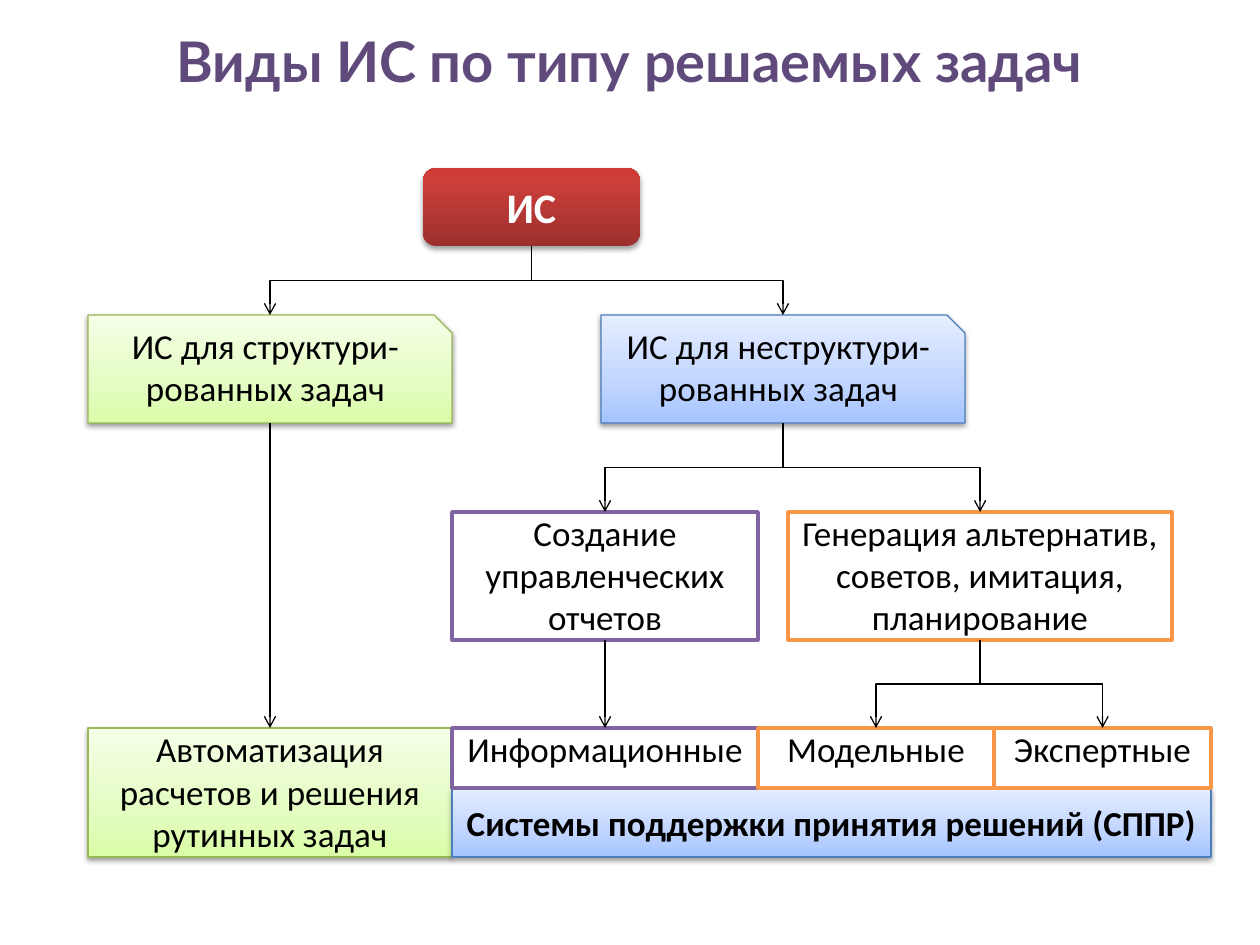
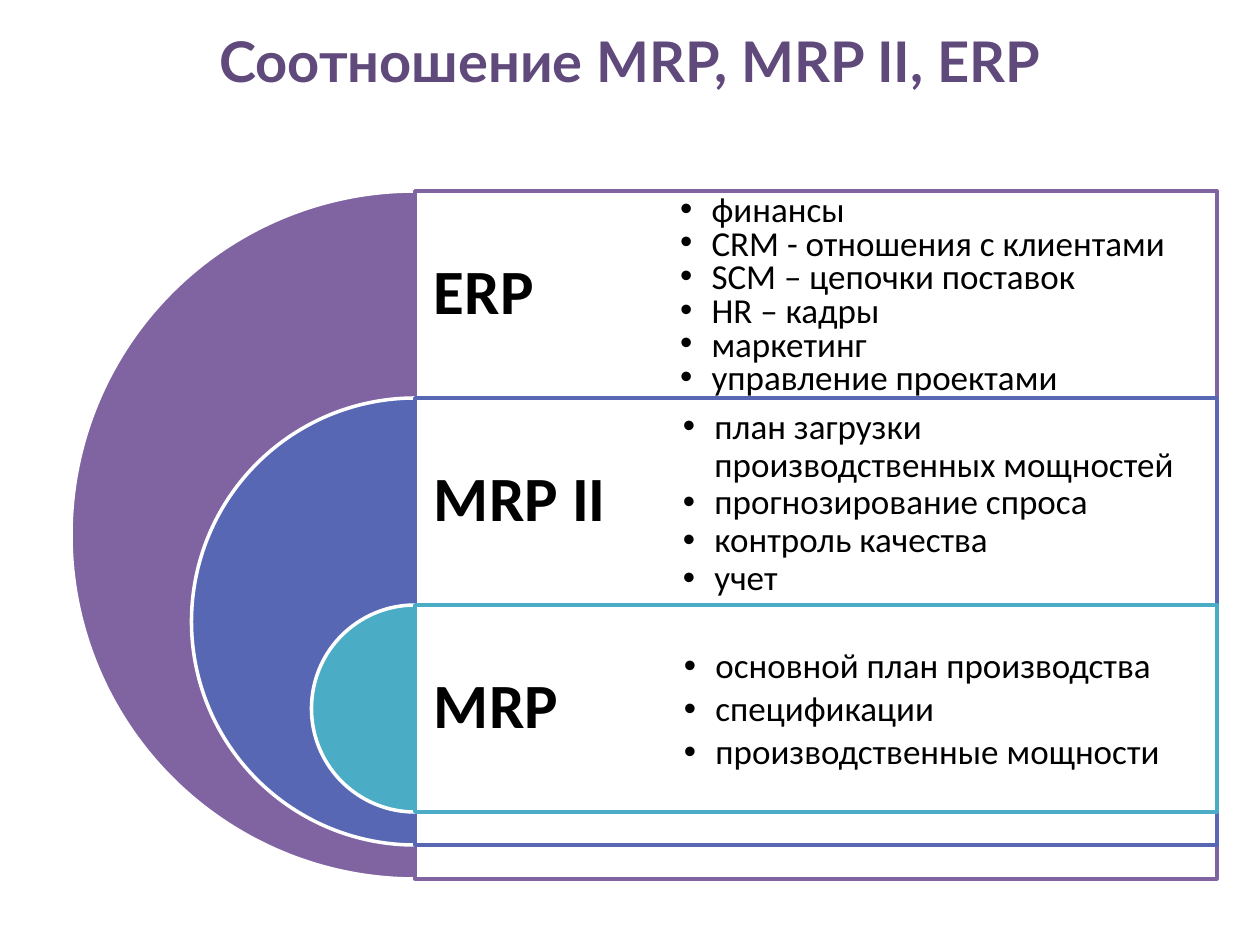
from lxml import etree
from pptx import Presentation
from pptx.dml.color import RGBColor
from pptx.enum import shapes, text
from pptx.oxml.ns import qn
from pptx.util import Inches, Pt

PX_PER_INCH = 126
TITLE_FONT, BODY_FONT = "Lato", "Calibri"
BLACK = RGBColor(0x00, 0x00, 0x00)
WHITE = RGBColor(0xFF, 0xFF, 0xFF)
TITLE_PURPLE = RGBColor(0x60, 0x4A, 0x7B)
PURPLE = RGBColor(0x80, 0x64, 0xA2)
INDIGO = RGBColor(0x57, 0x67, 0xB4)
TEAL = RGBColor(0x4B, 0xAC, 0xC6)
ORANGE = RGBColor(0xF7, 0x96, 0x46)
GREEN_EDGE = RGBColor(0x98, 0xB9, 0x55)
BLUE_EDGE = RGBColor(0x4B, 0x7E, 0xBC)

# Gradient stops from bottom to top: percent, colour
RED_FADE = [(0, RGBColor(0x9C, 0x2F, 0x2D)), (80, RGBColor(0xCB, 0x3E, 0x3A)),
            (100, RGBColor(0xCE, 0x3B, 0x37))]
GREEN_FADE = [(0, RGBColor(0xDA, 0xFD, 0xA7)), (35, RGBColor(0xE4, 0xFC, 0xC2)),
              (100, RGBColor(0xF5, 0xFF, 0xE7))]
BLUE_FADE = [(0, RGBColor(0xA4, 0xC4, 0xFF)), (35, RGBColor(0xBF, 0xD4, 0xFF)),
             (100, RGBColor(0xE6, 0xEE, 0xFF))]

SHAPE = shapes.MSO_SHAPE
TOP, MIDDLE = text.MSO_ANCHOR.TOP, text.MSO_ANCHOR.MIDDLE
LEFT, CENTER = text.PP_ALIGN.LEFT, text.PP_ALIGN.CENTER


def px(*lengths):
    return [Inches(length / PX_PER_INCH) for length in lengths]


def child(parent, tag, **attributes):
    return etree.SubElement(parent, qn(tag), attributes)


def apply(target, values):
    for name, value in values.items():
        setattr(target, name, value)


def set_frame(frame, anchor, inset_x, inset_y):
    side, top = px(inset_x, inset_y)
    apply(frame, {"word_wrap": True, "vertical_anchor": anchor,
                  "margin_left": side, "margin_right": side,
                  "margin_top": top, "margin_bottom": top})


def write(para, words, size, color=BLACK, bold=False, align=LEFT, font=BODY_FONT):
    para.alignment = align
    span = para.add_run()
    span.text = words
    apply(span.font, {"name": font, "size": Pt(size), "bold": bold})
    span.font.color.rgb = color


def add_page(deck, heading):
    page = deck.slides.add_slide(deck.slide_layouts[5])
    title = page.shapes.title
    apply(title, dict(zip(("left", "top", "width", "height"), px(63, 20, 1134, 147))))
    title.text_frame.vertical_anchor = TOP
    write(title.text_frame.paragraphs[0], heading, 32, TITLE_PURPLE, True, CENTER, TITLE_FONT)
    return page


def add_figure(page, kind, box, fill, edge=None, edge_width=2):
    figure = page.shapes.add_shape(kind, *px(*box))
    figure.shadow.inherit = False
    if isinstance(fill, list):
        fade(figure, fill)
    else:
        figure.fill.solid()
        figure.fill.fore_color.rgb = fill
    if edge is None:
        figure.line.fill.background()
    else:
        figure.line.color.rgb = edge
        figure.line.width = Pt(edge_width)
    return figure


def fade(figure, stops):
    """Vertical gradient with a soft shadow beneath."""
    figure.fill.gradient()
    figure.fill.gradient_angle = 90
    properties = figure._element.spPr
    stop_list = properties.find(".//" + qn("a:gsLst"))
    for stop in list(stop_list):
        stop_list.remove(stop)
    for percent, color in stops:
        stop = child(stop_list, "a:gs", pos=str(percent * 1000))
        child(stop, "a:srgbClr", val=str(color))
    shadow = child(properties.find(qn("a:effectLst")), "a:outerShdw", blurRad=str(Pt(3.1)),
                   dist=str(Pt(1.6)), dir="5400000", rotWithShape="0")
    child(child(shadow, "a:srgbClr", val="000000"), "a:alpha", val="38000")


# Slide 1: tree of system types

def add_node(page, box, words, fill, edge=None, edge_width=2, kind=SHAPE.RECTANGLE,
             anchor=TOP, **style):
    node = add_figure(page, kind, box, fill, edge, edge_width)
    set_frame(node.text_frame, anchor, 5, 0)
    write(node.text_frame.paragraphs[0], words, **{"size": 20, "align": CENTER, **style})
    return node


def add_link(page, parent, target):
    """Arrow from the bottom centre of one node to the top centre of another."""
    x1, y1 = parent.left + parent.width // 2, parent.top + parent.height
    x2, y2 = target.left + target.width // 2, target.top
    if abs(x2 - x1) < px(2)[0]:
        link = page.shapes.add_connector(shapes.MSO_CONNECTOR.STRAIGHT, x2, y1, x2, y2)
    else:
        # A vertical elbow is a horizontal one turned about its centre
        mid_x, mid_y = (x1 + x2) // 2, (y1 + y2) // 2
        half_run, half_rise = (y2 - y1) // 2, abs(x2 - x1) // 2
        to_right = x2 > x1
        if to_right:
            half_run = -half_run
        link = page.shapes.add_connector(
            shapes.MSO_CONNECTOR.ELBOW, mid_x - half_run, mid_y - half_rise,
            mid_x + half_run, mid_y + half_rise)
        frame = link._element.spPr.find(qn("a:xfrm"))
        frame.set("rot", "16200000" if to_right else "5400000")
    link.line.color.rgb = BLACK
    link.line.width = Pt(0.75)
    child(link.line._get_or_add_ln(), "a:tailEnd", type="arrow")
    child(link._element.spPr, "a:effectLst")


def build_tree(page):
    green = {"fill": GREEN_FADE, "edge": GREEN_EDGE, "edge_width": 0.75}
    blue = {"fill": BLUE_FADE, "edge": BLUE_EDGE, "edge_width": 0.75}
    purple = {"fill": WHITE, "edge": PURPLE}
    orange = {"fill": WHITE, "edge": ORANGE}
    snipped = SHAPE.SNIP_1_RECTANGLE

    # Nodes, level by level
    root = add_node(page, (423, 168, 217, 78), "ИС", RED_FADE, kind=SHAPE.ROUNDED_RECTANGLE,
                    anchor=MIDDLE, size=24, color=WHITE, bold=True)
    structured = add_node(page, (88, 315, 364, 108), "ИС для структури-рованных задач",
                          kind=snipped, **green)
    unstructured = add_node(page, (601, 315, 364, 108), "ИС для неструктури-рованных задач",
                            kind=snipped, **blue)
    automation = add_node(page, (88, 728, 364, 129),
                          "Автоматизация расчетов и решения рутинных задач", **green)
    reports = add_node(page, (452, 512, 306, 128), "Создание управленческих отчетов", **purple)
    options = add_node(page, (788, 512, 384, 128),
                       "Генерация альтернатив, советов, имитация, планирование", **orange)
    add_node(page, (452, 788, 759, 69), "Системы поддержки принятия решений (СППР)",
             anchor=MIDDLE, bold=True, **blue)
    informational = add_node(page, (452, 728, 306, 60), "Информационные", **purple)
    model = add_node(page, (758, 728, 236, 60), "Модельные", **orange)
    expert = add_node(page, (994, 728, 217, 60), "Экспертные", **orange)

    # Arrows
    for parent, targets in ((root, (structured, unstructured)), (structured, (automation,)),
                            (unstructured, (reports, options)), (reports, (informational,)),
                            (options, (model, expert))):
        for target in targets:
            add_link(page, parent, target)


# Slide 2: nested half circles with bands

def add_text_box(page, box, inset):
    frame = page.shapes.add_textbox(*px(*box)).text_frame
    set_frame(frame, MIDDLE, inset, inset)
    return frame


def add_list(page, box, items, spacing, gap):
    frame = add_text_box(page, box, 34)
    indent = Inches(0.25)
    for index, item in enumerate(items):
        para = frame.add_paragraph() if index else frame.paragraphs[0]
        apply(para, {"line_spacing": spacing, "space_after": Pt(gap)})
        properties = para._p.get_or_add_pPr()
        properties.set("marL", str(indent))
        properties.set("indent", str(-indent))
        child(properties, "a:buFont", typeface="Arial")
        child(properties, "a:buChar", char="•")
        write(para, item, 20)


def build_nesting(page):
    axis, right, top, step = 415, 1217, 191, 207
    rings = [
        ("ERP", 688, PURPLE, 646, 0.8, 0,
         ["финансы", "CRM - отношения с клиентами", "SCM – цепочки поставок",
          "HR – кадры", "маркетинг", "управление проектами"]),
        ("MRP II", 447, INDIGO, 649, 0.9, 0,
         ["план загрузки производственных мощностей", "прогнозирование спроса",
          "контроль качества", "учет"]),
        ("MRP", 207, TEAL, 650, 0.9, 3,
         ["основной план производства", "спецификации", "производственные мощности"]),
    ]
    # Half circle, band and name of each ring
    for index, (name, size, color, *_) in enumerate(rings):
        y = top + index * step
        half = add_figure(page, SHAPE.PIE, (axis - size / 2, y, size, size), color, WHITE)
        half.adjustments[0], half.adjustments[1] = 54, 162
        band = add_figure(page, SHAPE.RECTANGLE, (axis, y, right - axis, size), WHITE, color)
        tint = band._element.spPr.find(qn("a:solidFill"))[0]
        child(tint, "a:alpha", val="90000")
        label = add_text_box(page, (axis, y, 402, step), 19).paragraphs[0]
        label.line_spacing = 0.9
        write(label, name, 36, bold=True)
    # Lists
    for index, (*_, left, spacing, gap, items) in enumerate(rings):
        box = (left, top + index * step + 2, right - left, step)
        add_list(page, box, items, spacing, gap)


def main():
    deck = Presentation()
    deck.slide_width, deck.slide_height = Inches(10), Inches(7.5)
    build_tree(add_page(deck, "Виды ИС по типу решаемых задач"))
    build_nesting(add_page(deck, "Соотношение MRP, MRP II, ERP"))
    deck.save("out.pptx")


if __name__ == "__main__":
    main()
